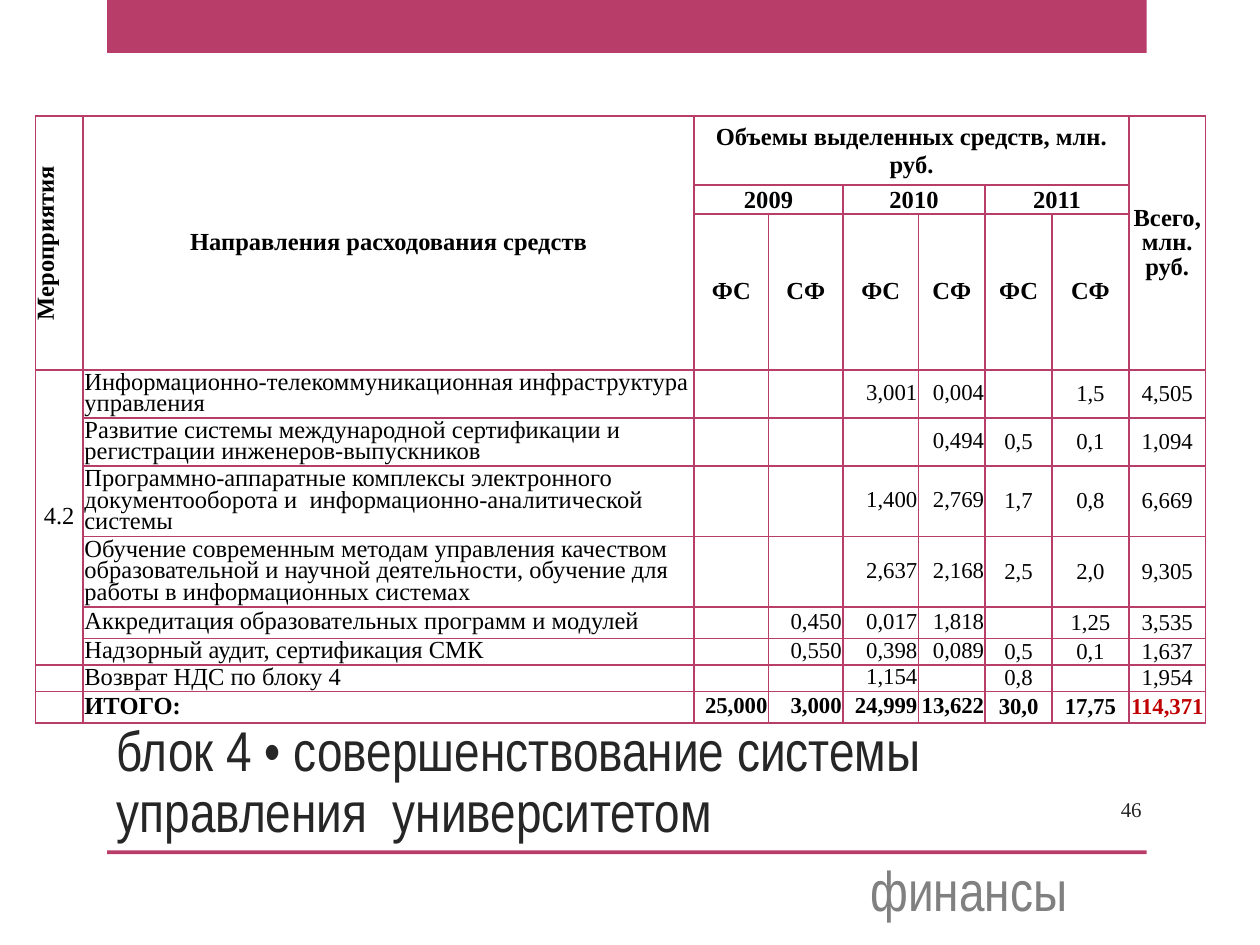
from dataclasses import dataclass

import pptx
import pptx.dml.color
import pptx.enum.shapes
import pptx.enum.text
import pptx.util
from lxml import etree
from pptx.oxml.ns import qn

Inches = pptx.util.Inches
ALIGN = pptx.enum.text.PP_ALIGN
ANCHOR = pptx.enum.text.MSO_ANCHOR


@dataclass(frozen=True)
class Theme:
    accent: str = "B83D68"
    text: str = "000000"
    title: str = "262626"
    subtitle: str = "808080"
    total: str = "C00000"
    heading_font: str = "Arial Narrow"
    body_font: str = "Times New Roman"
    heading_size: int = 32
    label_size: int = 14
    value_size: int = 13
    number_size: int = 12


THEME = Theme()

COLUMNS = [0.38, 4.85, 0.59, 0.59, 0.6, 0.53, 0.53, 0.61, 0.61]
ROWS = [0.55, 0.23, 0.45, 0.38, 0.38, 0.56, 0.56, 0.25, 0.21, 0.21, 0.25]
HEADER_ROWS = 3
FIRST_CENTERED_COLUMN = 6
YEARS = ["2009", "2010", "2011"]
EXPENSES = [
    ["Информационно-телекоммуникационная инфраструктура управления",
     "", "", "3,001", "0,004", "", "1,5", "4,505"],
    ["Развитие системы международной сертификации и регистрации инженеров-выпускников",
     "", "", "", "0,494", "0,5", "0,1", "1,094"],
    ["Программно-аппаратные комплексы электронного документооборота и  "
     "информационно-аналитической системы",
     "", "", "1,400", "2,769", "1,7", "0,8", "6,669"],
    ["Обучение современным методам управления качеством образовательной и научной "
     "деятельности, обучение для работы в информационных системах",
     "", "", "2,637", "2,168", "2,5", "2,0", "9,305"],
    ["Аккредитация образовательных программ и модулей",
     "", "0,450", "0,017", "1,818", "", "1,25", "3,535"],
    ["Надзорный аудит, сертификация СМК",
     "", "0,550", "0,398", "0,089", "0,5", "0,1", "1,637"],
    ["Возврат НДС по блоку 4", "", "", "1,154", "", "0,8", "", "1,954"],
    ["ИТОГО:", "25,000", "3,000", "24,999", "13,622", "30,0", "17,75", "114,371"],
]


def rgb(color):
    return pptx.dml.color.RGBColor.from_string(color)


def style_paragraph(p, font, size, color, align, spacing=None, bold=False):
    p.alignment = align
    p.line_spacing = spacing
    p.font.name = font
    p.font.size = pptx.util.Pt(size)
    p.font.bold = bold
    p.font.color.rgb = rgb(color)


def add_bar(slide, left, top, width, height):
    sp = slide.shapes.add_shape(
        pptx.enum.shapes.MSO_SHAPE.RECTANGLE,
        Inches(left), Inches(top), Inches(width), Inches(height))
    sp.shadow.inherit = False
    sp.fill.solid()
    sp.fill.fore_color.rgb = rgb(THEME.accent)
    sp.line.fill.background()


def add_text(slide, box, text, font, size, color, anchor=ANCHOR.MIDDLE,
             align=ALIGN.LEFT, spacing=None):
    sp = slide.shapes.add_textbox(*(Inches(v) for v in box))
    tf = sp.text_frame
    tf.word_wrap = True
    tf.vertical_anchor = anchor
    p = tf.paragraphs[0]
    p.text = text
    style_paragraph(p, font, size, color, align, spacing)


def prepare_cell(cell):
    """Give a cell its borders, no fill and a small empty paragraph."""
    tc_pr = cell._tc.get_or_add_tcPr()
    for side in ("lnL", "lnR", "lnT", "lnB"):
        ln = etree.SubElement(tc_pr, qn(f"a:{side}"), w=str(pptx.util.Pt(1)))
        fill = etree.SubElement(ln, qn("a:solidFill"))
        etree.SubElement(fill, qn("a:srgbClr"), val=THEME.accent)
    cell.fill.background()
    cell.margin_left = cell.margin_right = cell.margin_top = cell.margin_bottom = 0
    etree.SubElement(cell.text_frame.paragraphs[0]._p, qn("a:endParaRPr"), sz="1000")


def fill_cell(cell, text, size=THEME.label_size, color=THEME.text,
              align=ALIGN.CENTER, spacing=0.8, bold=False, inset=0.01):
    if not text:
        return
    cell.vertical_anchor = ANCHOR.MIDDLE
    cell.margin_left = cell.margin_right = cell.margin_top = Inches(inset)
    p = cell.text_frame.paragraphs[0]
    p.text = text
    style_paragraph(p, THEME.body_font, size, color, align, spacing, bold)


def fill_header(table):
    last = len(COLUMNS) - 1
    for column in (0, 1, last):
        table.cell(0, column).merge(table.cell(HEADER_ROWS - 1, column))
    table.cell(0, 2).merge(table.cell(0, last - 1))

    fill_cell(table.cell(0, 0), "Мероприятия", bold=True)
    table.cell(0, 0)._tc.get_or_add_tcPr().set("vert", "vert270")
    fill_cell(table.cell(0, 1), "Направления расходования средств", bold=True)
    fill_cell(table.cell(0, 2), "Объемы выделенных средств, млн. руб.",
              spacing=None, bold=True)
    fill_cell(table.cell(0, last), "Всего, млн. руб.", spacing=0.9, bold=True)
    for i, year in enumerate(YEARS):
        column = 2 + 2 * i
        table.cell(1, column).merge(table.cell(1, column + 1))
        fill_cell(table.cell(1, column), year, spacing=None, bold=True)
        for offset, source in enumerate(("ФС", "СФ")):
            fill_cell(table.cell(2, column + offset), source, bold=True)


def fill_expenses(table):
    table.cell(HEADER_ROWS, 0).merge(table.cell(HEADER_ROWS + 5, 0))
    fill_cell(table.cell(HEADER_ROWS, 0), "4.2")
    for row, (label, *values) in enumerate(EXPENSES, HEADER_ROWS):
        is_total = row == len(ROWS) - 1
        fill_cell(table.cell(row, 1), label, align=ALIGN.LEFT, bold=is_total)
        for column, value in enumerate(values, 2):
            grand_total = is_total and column == len(COLUMNS) - 1
            if column < FIRST_CENTERED_COLUMN:
                layout = dict(align=ALIGN.RIGHT)
            else:
                layout = dict(spacing=None, inset=0)
            fill_cell(table.cell(row, column), value, THEME.value_size,
                      THEME.total if grand_total else THEME.text,
                      bold=is_total, **layout)


def add_budget_table(slide):
    table = slide.shapes.add_table(
        len(ROWS), len(COLUMNS), Inches(0.28), Inches(0.92),
        Inches(sum(COLUMNS)), Inches(sum(ROWS))).table
    table.first_row = table.horz_banding = False
    for column, width in zip(table.columns, COLUMNS):
        column.width = Inches(width)
    for row, height in zip(table.rows, ROWS):
        row.height = Inches(height)
    for cell in table.iter_cells():
        prepare_cell(cell)
    fill_header(table)
    fill_expenses(table)


def main():
    prs = pptx.Presentation()
    prs.slide_width, prs.slide_height = Inches(10), Inches(7.5)
    slide = prs.slides.add_slide(prs.slide_layouts[6])
    add_bar(slide, 0.85, 0, 8.25, 0.42)
    add_bar(slide, 0.85, 6.75, 8.25, 0.03)
    add_budget_table(slide)
    add_text(slide, (0.83, 5.88, 8.26, 0.87),
             "блок 4 • совершенствование системы управления  университетом",
             THEME.heading_font, THEME.heading_size, THEME.title,
             anchor=ANCHOR.BOTTOM, spacing=0.9)
    add_text(slide, (6.81, 6.81, 2.19, 0.49), "финансы",
             THEME.heading_font, THEME.heading_size, THEME.subtitle)
    add_text(slide, (8.33, 6.22, 0.83, 0.4), "46",
             THEME.body_font, THEME.number_size, THEME.title, align=ALIGN.RIGHT)
    prs.save("out.pptx")


if __name__ == "__main__":
    main()
